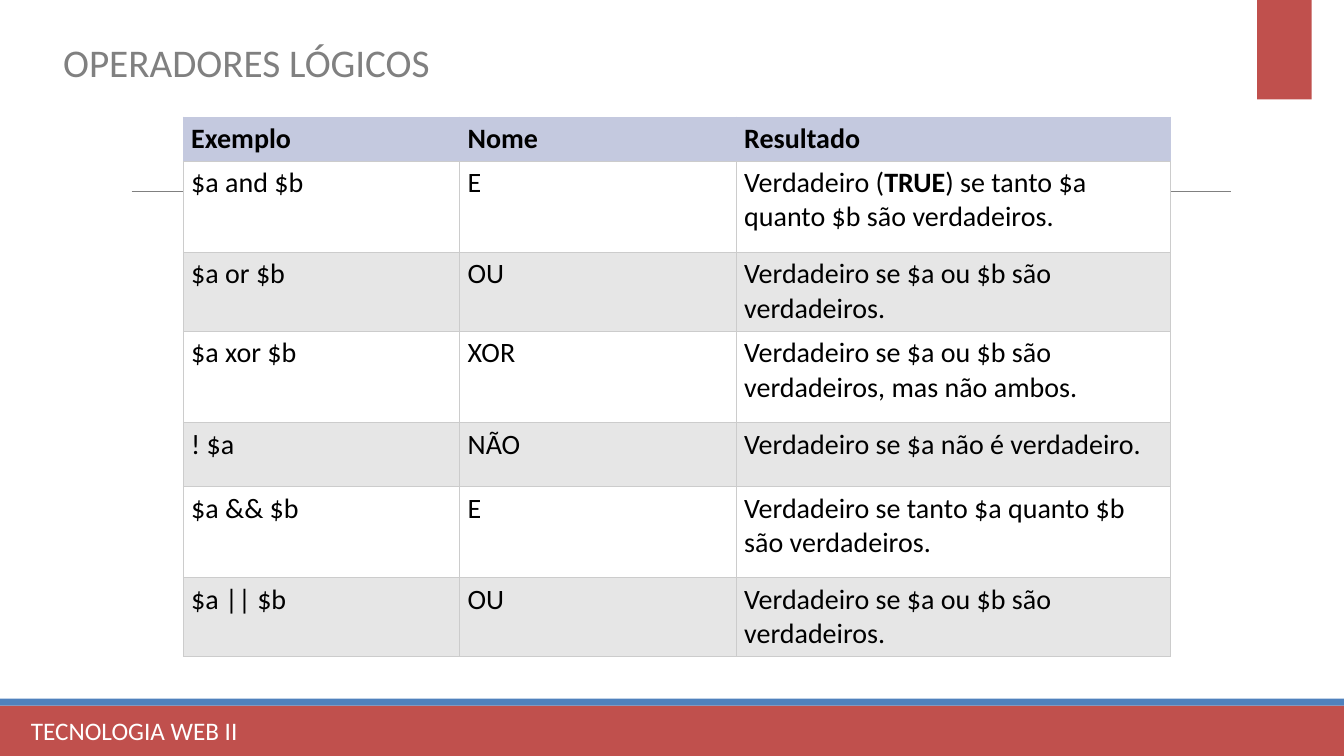
from lxml.etree import SubElement
from pptx import Presentation
from pptx.dml.color import RGBColor
from pptx.enum.shapes import MSO_CONNECTOR, MSO_SHAPE
from pptx.oxml import parse_xml
from pptx.oxml.ns import nsdecls, qn
from pptx.util import Pt

COLORS = {
    "red": "C0504D",
    "blue": "4F81BD",
    "gray": "808080",
    "white": "FFFFFF",
    "black": "000000",
    "header": "C4C9DF",
    "band": "E6E6E6",
    "border": "CCCCCC",
}
FONT = "Calibri"
SLIDE_WIDTH, SLIDE_HEIGHT = 960, 540

HEADINGS = ["Exemplo", "Nome", "Resultado"]
OPERATORS = [
    ("$a and $b", "E", "Verdadeiro (**TRUE**) se tanto $a quanto $b são verdadeiros."),
    ("$a or $b", "OU", "Verdadeiro se $a ou $b são verdadeiros."),
    ("$a xor $b", "XOR", "Verdadeiro se $a ou $b são verdadeiros, mas não ambos."),
    ("! $a", "NÃO", "Verdadeiro se $a não é verdadeiro."),
    ("$a && $b", "E", "Verdadeiro se tanto $a quanto $b são verdadeiros."),
    ("$a || $b", "OU", "Verdadeiro se $a ou $b são verdadeiros."),
]
COLUMN_WIDTHS = [197.5, 197.5, 310]
ROW_HEIGHTS = [31.4, 65.2, 56.4, 65.2, 45.7, 65.2, 56.4]


def color(name):
    return RGBColor.from_string(COLORS[name])


def style_font(paragraph, size, color_name):
    paragraph.font.name = FONT
    paragraph.font.size = Pt(size)
    paragraph.font.color.rgb = color(color_name)


def add_bar(slide, left, top, width, height, color_name):
    shape = slide.shapes.add_shape(
        MSO_SHAPE.RECTANGLE, Pt(left), Pt(top), Pt(width), Pt(height))
    shape.shadow.inherit = False
    shape.fill.solid()
    shape.fill.fore_color.rgb = color(color_name)
    shape.line.fill.background()


def add_label(slide, left, top, width, height, text, size, color_name):
    box = slide.shapes.add_textbox(Pt(left), Pt(top), Pt(width), Pt(height))
    box.text_frame.word_wrap = True
    paragraph = box.text_frame.paragraphs[0]
    paragraph.text = text
    style_font(paragraph, size, color_name)


def add_rule(slide, left, top, width):
    rule = slide.shapes.add_connector(
        MSO_CONNECTOR.STRAIGHT, Pt(left), Pt(top), Pt(left + width), Pt(top))
    rule.line.color.rgb = color("gray")
    rule.line.width = Pt(0.5)
    SubElement(rule._element.spPr, qn("a:effectLst"))


def add_footer(slide, left, top, width, height):
    stripe = 5
    add_bar(slide, left, top + stripe, width, height - stripe, "red")
    add_bar(slide, left, top, width, stripe, "blue")
    add_label(slide, left + 15, top + 8.6, 512, 29, "TECNOLOGIA WEB II", 18, "white")


def set_borders(cell, side_color, bottom_color):
    properties = cell._tc.get_or_add_tcPr()
    for index, side in enumerate("LRTB"):
        name = bottom_color if side == "B" else side_color
        properties.insert(index, parse_xml(
            f'<a:ln{side} {nsdecls("a")} w="{Pt(0.75)}"><a:solidFill>'
            f'<a:srgbClr val="{COLORS[name]}"/></a:solidFill></a:ln{side}>'))


def fill_cell(cell, text, bold, fill_name, side_color):
    cell.margin_left = cell.margin_right = Pt(5.6)
    cell.margin_top = cell.margin_bottom = Pt(3.6)
    cell.fill.solid()
    cell.fill.fore_color.rgb = color(fill_name)
    set_borders(cell, side_color, "border")
    paragraph = cell.text_frame.paragraphs[0]
    style_font(paragraph, 20, "black")
    for index, part in enumerate(text.split("**")):
        run = paragraph.add_run()
        run.text = part
        run.font.bold = bold or index % 2 == 1


def add_operator_table(slide, left, top):
    rows = [HEADINGS, *OPERATORS]
    table = slide.shapes.add_table(
        len(rows), len(HEADINGS), Pt(left), Pt(top),
        Pt(sum(COLUMN_WIDTHS)), Pt(sum(ROW_HEIGHTS))).table
    table.first_row = table.horz_banding = False
    for column, width in zip(table.columns, COLUMN_WIDTHS):
        column.width = Pt(width)
    for row_index, texts in enumerate(rows):
        table.rows[row_index].height = Pt(ROW_HEIGHTS[row_index])
        is_header = row_index == 0
        fill_name = "header" if is_header else ("band", "white")[row_index % 2]
        side_color = "header" if is_header else "border"
        for column_index, text in enumerate(texts):
            fill_cell(table.cell(row_index, column_index), text,
                      is_header, fill_name, side_color)


def main():
    presentation = Presentation()
    presentation.slide_width = Pt(SLIDE_WIDTH)
    presentation.slide_height = Pt(SLIDE_HEIGHT)
    slide = presentation.slides.add_slide(presentation.slide_layouts[6])
    add_rule(slide, 94, 136.5, 785)
    add_footer(slide, 0, 499, SLIDE_WIDTH, SLIDE_HEIGHT - 499)
    add_bar(slide, 898, 0, 39, 71, "red")
    add_label(slide, 38, 23.5, 300, 41, "OPERADORES LÓGICOS", 28, "gray")
    add_operator_table(slide, 131, 83.6)
    presentation.save("out.pptx")


if __name__ == "__main__":
    main()
